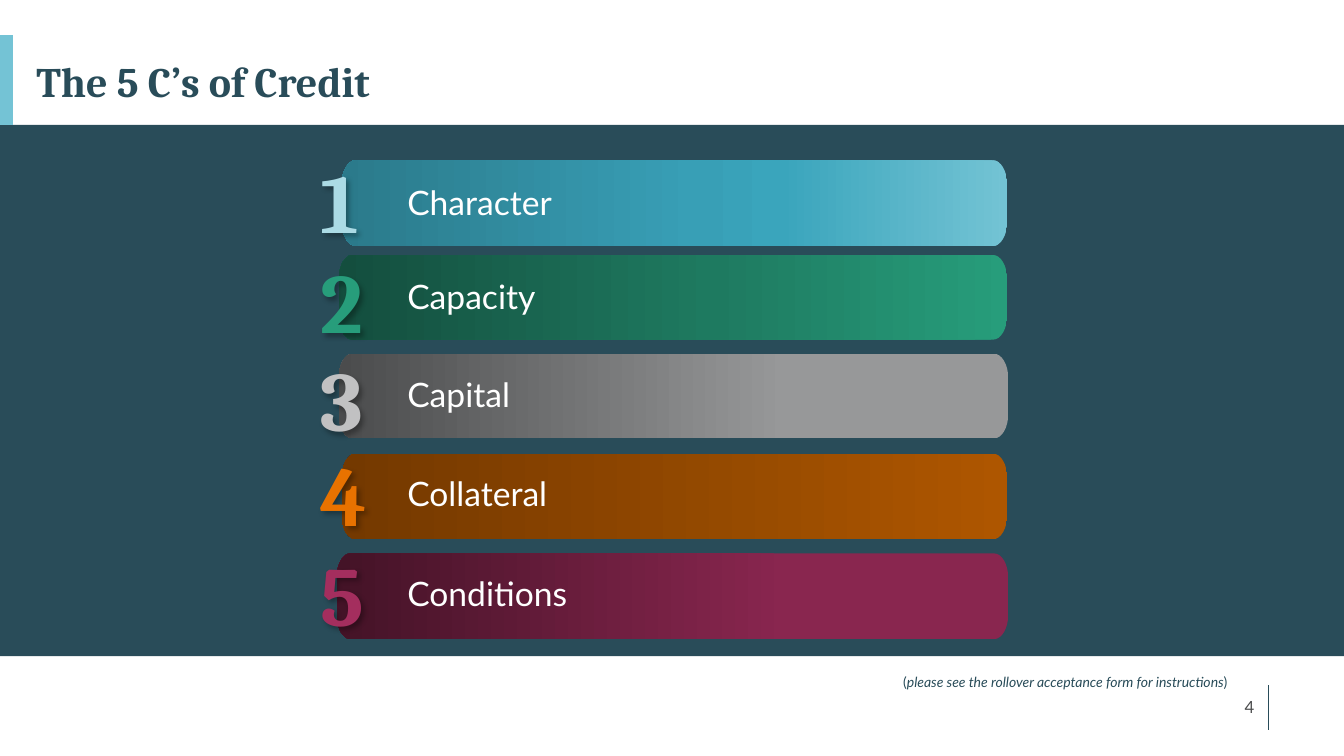
import pptx
import pptx.util
import pptx.dml.color
import pptx.enum.shapes
import pptx.enum.text
import pptx.oxml
import pptx.oxml.ns
from pptx.util import Inches

ANCHOR = pptx.enum.text.MSO_ANCHOR
ALIGN = pptx.enum.text.PP_ALIGN
NAVY, SKY, GREY, WHITE = "294C59", "74C3D5", "4B4C4D", "FFFFFF"
NS = 'xmlns:a="http://schemas.openxmlformats.org/drawingml/2006/main"'

TITLE = "The 5 C’s of Credit"
NOTE = [("(", False),
        ("please see the rollover acceptance form for instructions", True),
        (")", False)]
PAGE = "4"
BARS = [
    dict(label="Character", box=(3.39, 1.59, 6.6, 0.85), label_y=1.75, label_h=0.5,
         digit_y=1.43, digit="ABDBE5", spacing=1.0,
         stops=[(0, "73C3D4"), (34, "3AA5BC"), (47, "389FB6"), (100, "2B7A8B")]),
    dict(label="Capacity", box=(3.36, 2.53, 6.63, 0.84), label_y=2.69, label_h=0.5,
         digit_y=2.43, digit="279D7B", spacing=1.0,
         stops=[(0, "279D7B"), (44, "1E7A60"), (100, "144E3E")]),
    dict(label="Capital", box=(3.36, 3.51, 6.64, 0.84), label_y=3.7, label_h=0.46,
         digit_y=3.4, digit="C1C1C2", spacing=0.9,
         stops=[(33, "979899"), (100, "4B4C4D")]),
    dict(label="Collateral", box=(3.39, 4.5, 6.6, 0.85), label_y=4.69, label_h=0.46,
         digit_y=4.34, digit="E87200", spacing=0.9,
         stops=[(0, "AE5600"), (100, "743900")]),
    dict(label="Conditions", box=(3.34, 5.49, 6.66, 0.85), label_y=5.68, label_h=0.46,
         digit_y=5.33, digit="A42E5E", spacing=0.9,
         stops=[(33, "89264F"), (100, "441327")]),
]
CORNER_W, CORNER_H, CURVE = 0.14, 0.24, 0.55


def rgb(value):
    return pptx.dml.color.RGBColor.from_string(value)


def set_all(target, values):
    for name, value in values.items():
        setattr(target, name, value)


def add_run(p, text, size, font, color, **extra):
    r = p.add_run()
    r.text = text
    set_all(r.font, dict(size=pptx.util.Pt(size), name=font, **extra))
    r.font.color.rgb = rgb(color)


def add_text(s, box, runs, frame=None, para=None):
    sp = s.shapes.add_textbox(*map(Inches, box))
    tf = sp.text_frame
    set_all(tf, dict(word_wrap=True, **(frame or {})))
    p = tf.paragraphs[0]
    set_all(p, para or {})
    for text, style in runs:
        add_run(p, text, **style)
    return sp


def add_line(s, start, end, color, width):
    line = s.shapes.add_connector(pptx.enum.shapes.MSO_CONNECTOR.STRAIGHT,
                                  *map(Inches, start + end))
    line.line.color.rgb = rgb(color)
    line.line.width = pptx.util.Pt(width)
    line._element.spPr.append(pptx.oxml.parse_xml(f"<a:effectLst {NS}/>"))


def bar_outline(x, y, w, h):
    left, right, top, bottom = x, x + w, y, y + h
    points = [(right, bottom - CORNER_H), (right - CORNER_W, bottom),
              (left + CORNER_W, bottom), (left, bottom - CORNER_H),
              (left, top + CORNER_H), (left + CORNER_W, top),
              (right - CORNER_W, top), (right, top + CORNER_H)]
    return [(Inches(px), Inches(py)) for px, py in points]


def toward(start, end):
    return tuple(round(a + CURVE * (b - a)) for a, b in zip(start, end))


def round_corners(sp):
    points = sp._element.spPr.findall(".//" + pptx.oxml.ns.qn("a:pt"))
    places = [(int(pt.get("x")), int(pt.get("y"))) for pt in points]
    for i in range(0, len(places) - 1, 2):
        start, end = places[i], places[i + 1]
        vertex = (start[0], end[1]) if i % 4 == 0 else (end[0], start[1])
        curve = "".join(f'<a:pt x="{x}" y="{y}"/>' for x, y in
                        (toward(start, vertex), toward(end, vertex), end))
        line = points[i + 1].getparent()
        line.getparent().replace(line, pptx.oxml.parse_xml(
            f"<a:cubicBezTo {NS}>{curve}</a:cubicBezTo>"))


def add_bar(s, box, stops):
    points = bar_outline(*box)
    builder = s.shapes.build_freeform(*points[0])
    builder.add_line_segments(points[1:], close=True)
    sp = builder.convert_to_shape()
    round_corners(sp)
    sp.shadow.inherit = False
    sp.line.fill.background()
    sp.fill.gradient()
    sp.fill.gradient_angle = 180
    stop_list = sp._element.spPr.find(".//" + pptx.oxml.ns.qn("a:gsLst"))
    for stop in list(stop_list):
        stop_list.remove(stop)
    for position, color in stops:
        stop_list.append(pptx.oxml.parse_xml(
            f'<a:gs {NS} pos="{position * 1000}"><a:srgbClr val="{color}"/></a:gs>'))


def add_digit(s, number, y, color):
    style = dict(size=60, font="Cambria", color=color, bold=True)
    sp = add_text(s, (3.08, y, 1.34, 1.11), [(str(number), style)])
    sp._element.spPr.append(pptx.oxml.parse_xml(
        f'<a:effectLst {NS}><a:outerShdw blurRad="50800" dist="38100" dir="2700000" '
        'algn="tl" rotWithShape="0"><a:srgbClr val="000000"><a:alpha val="30000"/>'
        '</a:srgbClr></a:outerShdw></a:effectLst>'))


def main():
    prs = pptx.Presentation()
    prs.slide_width, prs.slide_height = Inches(13.33), Inches(7.5)
    s = prs.slides.add_slide(prs.slide_layouts[5])

    title = s.shapes.title
    set_all(title, dict(left=Inches(0.26), top=Inches(0.35),
                        width=Inches(11.5), height=Inches(0.76)))
    set_all(title.text_frame, dict(vertical_anchor=ANCHOR.BOTTOM, word_wrap=True,
                                   auto_size=pptx.enum.text.MSO_AUTO_SIZE.NONE))
    p = title.text_frame.paragraphs[0]
    set_all(p, dict(alignment=ALIGN.LEFT, line_spacing=0.9))
    add_run(p, TITLE, 30, "Cambria", NAVY, bold=True)

    add_line(s, (12.58, 6.8), (12.58, 7.24), NAVY, 0.75)
    band = s.shapes.add_shape(pptx.enum.shapes.MSO_SHAPE.RECTANGLE,
                              *map(Inches, (0, 1.24, 13.33, 5.27)))
    band.shadow.inherit = False
    band.fill.solid()
    band.fill.fore_color.rgb = rgb(NAVY)
    band.line.fill.background()
    add_line(s, (0.06, 1.24), (0.06, 0.35), SKY, 10)
    add_text(s, (9.54, 6.81, 3, 0.4), [(PAGE, dict(size=12, font="Lato", color=GREY))],
             dict(vertical_anchor=ANCHOR.MIDDLE), dict(alignment=ALIGN.RIGHT))

    label_style = dict(size=24, font="Lato", color=WHITE)
    label_frame = dict(vertical_anchor=ANCHOR.MIDDLE, margin_left=0, margin_right=0)
    for bar in BARS:
        add_bar(s, bar["box"], bar["stops"])
        add_text(s, (4.04, bar["label_y"], 5.4, bar["label_h"]),
                 [(bar["label"], label_style)], label_frame,
                 dict(line_spacing=bar["spacing"]))
    add_text(s, (8.86, 6.63, 4.4, 0.57),
             [(text, dict(size=10, font="Lato", color=NAVY, italic=italic))
              for text, italic in NOTE])
    for number, bar in enumerate(BARS, 1):
        add_digit(s, number, bar["digit_y"], bar["digit"])

    prs.save("out.pptx")


if __name__ == "__main__":
    main()
